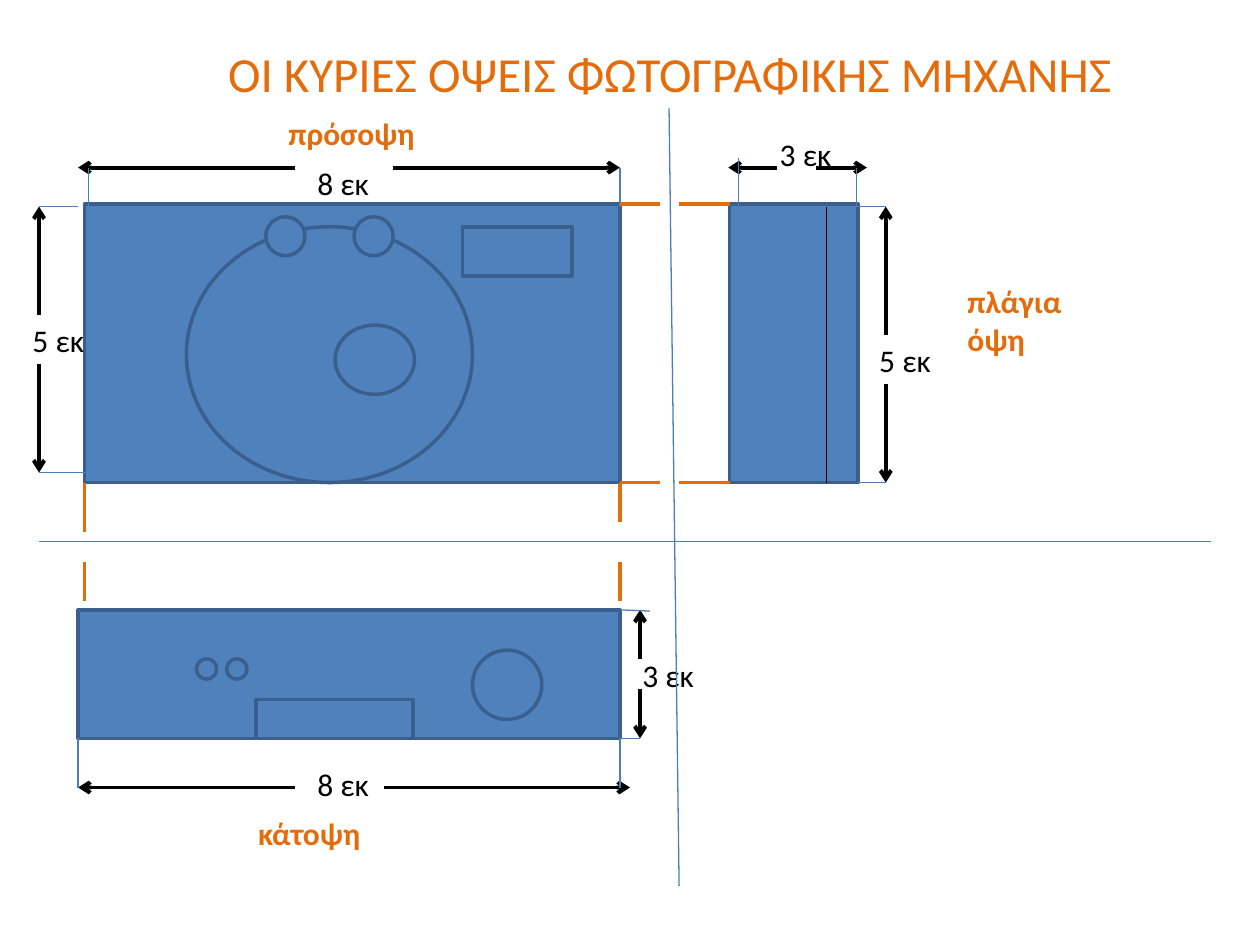
from dataclasses import dataclass

from lxml import etree
from pptx import Presentation
from pptx.dml.color import RGBColor
from pptx.enum.shapes import MSO_CONNECTOR, MSO_SHAPE
from pptx.enum.text import MSO_ANCHOR, PP_ALIGN
from pptx.oxml.ns import qn
from pptx.util import Pt

RECT, OVAL = MSO_SHAPE.RECTANGLE, MSO_SHAPE.OVAL
LINE = MSO_CONNECTOR.STRAIGHT
MID, CENTER = MSO_ANCHOR.MIDDLE, PP_ALIGN.CENTER
PX = 9144  # 100 px to the inch


@dataclass(frozen=True)
class Theme:
    font: str = "Calibri"
    body: str = "4F81BD"
    edge: str = "3A5F8C"
    thin: str = "4B7EBC"
    accent: str = "E46C0A"
    ink: str = "000000"
    head: int = 28
    text: int = 18
    fine: float = 0.75
    bold: float = 2
    arrow: float = 2.25


T = Theme()


def emu(*nums):
    return [n * PX for n in nums]


def rgb(code):
    return RGBColor.from_string(code)


def style(frame, text, size, color, bold=False):
    frame.word_wrap = True
    frame.text = text
    font = frame.paragraphs[0].runs[0].font
    font.name, font.size, font.bold = T.font, Pt(size), bold
    font.color.rgb = rgb(color)


class View:
    """Draws pieces relative to the top left corner of a box."""

    def __init__(self, slide, box):
        self.shapes = slide.shapes
        self.x, self.y, self.w, self.h = box

    def solid(self, kind, x, y, w, h):
        shape = self.shapes.add_shape(kind, *emu(self.x + x, self.y + y, w, h))
        shape.shadow.inherit = False
        shape.fill.solid()
        shape.fill.fore_color.rgb = rgb(T.body)
        shape.line.color.rgb = rgb(T.edge)
        shape.line.width = Pt(T.bold)

    def body(self):
        self.solid(RECT, 0, 0, self.w, self.h)

    def line(self, x1, y1, x2, y2, color=T.thin, width=T.fine, arrow=False):
        ends = emu(self.x + x1, self.y + y1, self.x + x2, self.y + y2)
        link = self.shapes.add_connector(LINE, *ends)
        link.line.color.rgb = rgb(color)
        link.line.width = Pt(width)
        props = link._element.find(qn("p:spPr"))
        if arrow:
            tip = etree.SubElement(props.find(qn("a:ln")), qn("a:tailEnd"))
            tip.set("type", "arrow")
        etree.SubElement(props, qn("a:effectLst"))

    def label(self, text, x, y, w=70, h=40, color=T.ink, bold=False):
        box = self.shapes.add_textbox(*emu(self.x + x, self.y + y, w, h))
        style(box.text_frame, text, T.text, color, bold)

    def name(self, text, x, y, w, h=40):
        self.label(text, x, y, w, h, T.accent, True)

    def size(self, text, at, stops, x=None, y=None):
        """Two arrows out from a gap: down the line x or along the line y."""
        low, gap, rest, high = stops
        for start, end in ((gap, low), (rest, high)):
            ends = (start, y, end, y) if x is None else (x, start, x, end)
            self.line(*ends, T.ink, T.arrow, True)
        self.label(text, *at)

    def ticks(self, *rows):
        for row in rows:
            self.line(*row)


def title(slide, box):
    head = slide.shapes.title
    head.left, head.top, head.width, head.height = emu(*box)
    style(head.text_frame, "OI ΚΥΡΙΕΣ ΟΨΕΙΣ ΦΩΤΟΓΡΑΦΙΚΗΣ ΜΗΧΑΝΗΣ", T.head, T.accent)
    head.text_frame.vertical_anchor = MID
    head.text_frame.paragraphs[0].alignment = CENTER


def front(slide, box):
    view = View(slide, box)
    view.body()
    # Lens, viewfinder and knobs
    view.solid(OVAL, 81, 18, 227, 203)
    view.solid(RECT, 300, 18, 87, 39)
    view.solid(OVAL, 199, 96, 63, 55)
    for x in (144, 214):
        view.solid(OVAL, x, 10, 31, 31)
    # Name and sizes
    view.name("πρόσοψη", 152, -76, 142)
    view.size("8 εκ", (175, -37), (-5, 167, 245, 425), y=-29)
    view.size("5 εκ", (-51, 88), (2, 88, 127, 213), x=-36)
    view.ticks((3, 2, 3, -29), (425, 2, 425, -29),
               (-5, 2, -36, 2), (3, 213, -36, 213))


def plan(slide, box):
    view = View(slide, box)
    view.body()
    # Buttons, lens and dial
    for x in (94, 118):
        view.solid(OVAL, x, 39, 16, 16)
    view.solid(RECT, 141, 71, 125, 31)
    view.solid(OVAL, 313, 32, 55, 55)
    # Name and sizes
    view.name("κάτοψη", 133, 157, 165)
    view.size("8 εκ", (180, 118), (0, 172, 243, 438), y=141)
    view.size("3 εκ", (438, 32), (0, 39, 63, 102), x=446)
    view.ticks((0, 102, 0, 141), (430, 102, 430, 141),
               (430, 0, 454, 1), (430, 102, 446, 102))


def side(slide, box):
    view = View(slide, box)
    view.body()
    view.line(77, 2, 77, 221, T.ink)
    # Name and sizes
    view.name("πλάγια όψη", 179, 57, 110, 71)
    view.size("3 εκ", (30, -60), (-1, 38, 69, 109), y=-29)
    view.size("5 εκ", (109, 104), (2, 104, 143, 221), x=124)
    view.ticks((7, 2, 7, -37), (101, 2, 101, -29),
               (101, 2, 124, 2), (101, 221, 124, 221))


def guides(slide, box):
    view = View(slide, box)
    # Projection lines from the front view to the other two
    for y in (162, 383):
        for x1, x2 in ((492, 524), (539, 579)):
            view.line(x1, y, x2, y, T.accent, T.bold)
    for x, stop in ((67, 422), (492, 414)):
        for y1, y2 in ((383, stop), (446, 477)):
            view.line(x, y1, x, y2, T.accent, T.bold)
    # Axes
    view.line(31, 430, 961, 430)
    view.line(531, 86, 539, 703)


def main():
    deck = Presentation()
    deck.slide_width, deck.slide_height = emu(1000, 750)
    slide = deck.slides.add_slide(deck.slide_layouts[5])
    title(slide, (122, 29, 819, 57))
    front(slide, (67, 162, 425, 221))
    plan(slide, (62, 484, 430, 102))
    side(slide, (579, 162, 102, 221))
    guides(slide, (0, 0, 1000, 750))
    deck.save("out.pptx")


if __name__ == "__main__":
    main()
